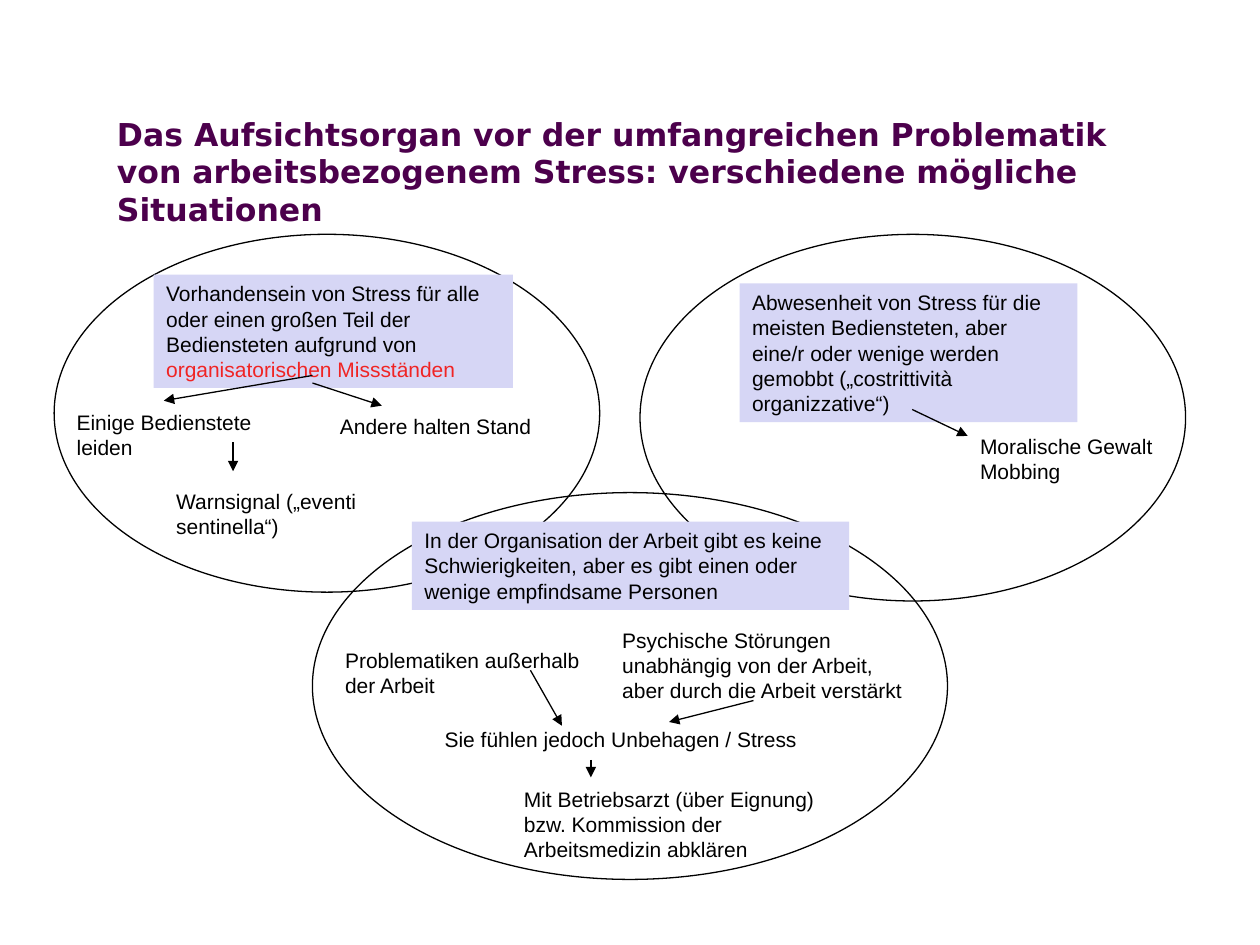
from dataclasses import dataclass
from lxml.etree import SubElement
from pptx import Presentation
from pptx.dml.color import RGBColor
from pptx.enum.shapes import MSO_CONNECTOR, MSO_SHAPE
from pptx.enum.text import MSO_ANCHOR, PP_ALIGN
from pptx.oxml.ns import qn
from pptx.util import Inches, Pt


@dataclass(frozen=True)
class Theme:
    title_font: str = "DejaVu Sans"
    body_font: str = "Arial"
    title_size: float = 18
    body_size: float = 12
    line_width: float = 0.75
    title: RGBColor = RGBColor(0x4C, 0x00, 0x4C)
    ink: RGBColor = RGBColor(0x00, 0x00, 0x00)
    accent: RGBColor = RGBColor(0xF0, 0x24, 0x24)
    panel: RGBColor = RGBColor(0xD6, 0xD6, 0xF5)


THEME = Theme()

TITLE = ("Das Aufsichtsorgan vor der umfangreichen Problematik von "
         "arbeitsbezogenem Stress: verschiedene mögliche Situationen")
TITLE_BOX = (0.83, 0.76, 8.5, 1.1)

SITUATIONS = [
    {
        "ellipse": (0.43, 1.86, 4.33, 2.84),
        "panel": ((1.22, 2.18, 2.85, 0.9),
                  "Vorhandensein von Stress für alle oder einen großen Teil der "
                  "Bediensteten aufgrund von ",
                  "organisatorischen Missständen"),
        "labels": [
            ((0.51, 3.2, 1.73, 0.5), "Einige Bedienstete leiden"),
            ((2.6, 3.23, 1.77, 0.3), "Andere halten Stand"),
            ((1.3, 3.83, 2.05, 0.5), "Warnsignal („eventi sentinella“)"),
        ],
        "arrows": [(2.48, 2.98, 1.3, 3.18), (2.48, 3.04, 3.03, 3.22),
                   (1.85, 3.51, 1.85, 3.74)],
    },
    {
        "ellipse": (5.08, 1.86, 4.33, 2.91),
        "panel": ((5.87, 2.25, 2.68, 1.1),
                  "Abwesenheit von Stress für die meisten Bediensteten, aber eine/r "
                  "oder wenige werden gemobbt („costrittività organizzative“)",
                  ""),
        "labels": [((7.68, 3.39, 1.57, 0.5), "Moralische Gewalt Mobbing")],
        "arrows": [(7.24, 3.25, 7.68, 3.46)],
    },
    {
        "ellipse": (2.48, 3.91, 5.04, 3.07),
        "panel": ((3.27, 4.14, 3.47, 0.7),
                  "In der Organisation der Arbeit gibt es keine Schwierigkeiten, "
                  "aber es gibt einen oder wenige empfindsame Personen",
                  ""),
        "labels": [
            ((2.64, 5.09, 2.28, 0.5), "Problematiken außerhalb der Arbeit"),
            ((4.84, 4.93, 2.44, 0.7), "Psychische Störungen unabhängig von der "
                                      "Arbeit, aber durch die Arbeit verstärkt"),
            ((3.43, 5.72, 3.21, 0.3), "Sie fühlen jedoch Unbehagen / Stress"),
            ((4.06, 6.19, 2.76, 0.7), "Mit Betriebsarzt (über Eignung) bzw. "
                                      "Kommission der Arbeitsmedizin abklären"),
        ],
        "arrows": [(4.21, 5.32, 4.46, 5.76), (5.98, 5.56, 5.31, 5.73),
                   (4.69, 6.03, 4.69, 6.17)],
    },
]


def inches(values):
    return [Inches(v) for v in values]


def write(sp, text, accent=""):
    tf = sp.text_frame
    tf.word_wrap = True
    tf.vertical_anchor = MSO_ANCHOR.TOP
    p = tf.paragraphs[0]
    p.alignment = PP_ALIGN.LEFT
    p.font.name = THEME.body_font
    p.font.size = Pt(THEME.body_size)
    for part, color in ((text, THEME.ink), (accent, THEME.accent)):
        if part:
            r = p.add_run()
            r.text = part
            r.font.color.rgb = color
    return tf


def add_title(s):
    tf = write(s.shapes.add_textbox(*inches(TITLE_BOX)), TITLE)
    tf.vertical_anchor = MSO_ANCHOR.BOTTOM
    p = tf.paragraphs[0]
    p.font.name = THEME.title_font
    p.font.size = Pt(THEME.title_size)
    p.font.bold = True
    p.runs[0].font.color.rgb = THEME.title


def add_ellipse(s, box):
    sp = s.shapes.add_shape(MSO_SHAPE.OVAL, *inches(box))
    sp.shadow.inherit = False
    sp.fill.background()
    sp.line.color.rgb = THEME.ink
    sp.line.width = Pt(THEME.line_width)


def add_panel(s, box, text, accent):
    sp = s.shapes.add_shape(MSO_SHAPE.RECTANGLE, *inches(box))
    sp.shadow.inherit = False
    sp.fill.solid()
    sp.fill.fore_color.rgb = THEME.panel
    sp.line.fill.background()
    write(sp, text, accent)


def add_arrow(s, ends):
    cx = s.shapes.add_connector(MSO_CONNECTOR.STRAIGHT, *inches(ends))
    cx.line.color.rgb = THEME.ink
    cx.line.width = Pt(THEME.line_width)
    SubElement(cx.line._get_or_add_ln(), qn("a:tailEnd"), type="triangle")
    SubElement(cx._element.spPr, qn("a:effectLst"))


def main():
    prs = Presentation()
    prs.slide_width, prs.slide_height = Inches(10), Inches(7.5)
    s = prs.slides.add_slide(prs.slide_layouts[6])
    add_title(s)
    for situation in SITUATIONS:
        add_ellipse(s, situation["ellipse"])
    for situation in SITUATIONS:
        add_panel(s, *situation["panel"])
        for box, text in situation["labels"]:
            write(s.shapes.add_textbox(*inches(box)), text)
        for ends in situation["arrows"]:
            add_arrow(s, ends)
    prs.save("out.pptx")


if __name__ == "__main__":
    main()
